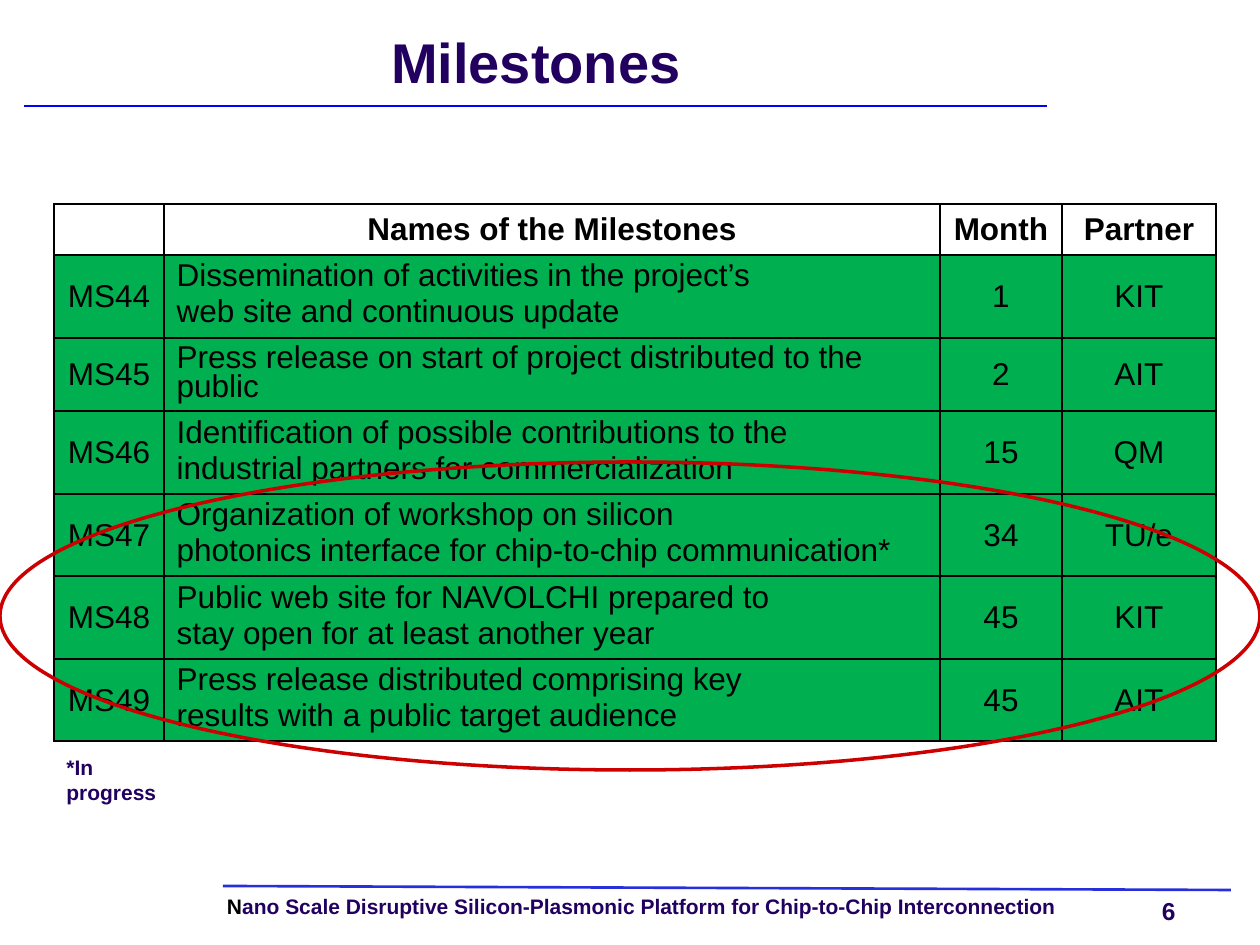
from lxml.etree import SubElement
from pptx import Presentation
from pptx.dml.color import RGBColor
from pptx.enum.shapes import MSO_CONNECTOR, MSO_SHAPE
from pptx.enum.text import MSO_ANCHOR, PP_ALIGN
from pptx.oxml.ns import qn
from pptx.util import Emu, Pt

EMU_PER_PX = 914400 / 126
FONT = "Arial"
COLORS = {
    "title": "220060", "text": "000000", "done": "00B050", "ring": "CC0000",
    "title_rule": "0000FF", "footer_rule": "262FDA",
}
COLUMNS = [110, 776, 122, 154]
ROWS = [51, 83, 73, 83, 82, 83, 82]
HEADER = ["", "Names of the Milestones", "Month", "Partner"]
MILESTONES = [
    ("MS44", ["Dissemination of activities in the project’s",
              "web site and continuous update"], "1", "KIT"),
    ("MS45", ["Press release on start of project distributed to the public"], "2", "AIT"),
    ("MS46", ["Identification of possible contributions to the",
              "industrial partners for commercialization"], "15", "QM"),
    ("MS47", ["Organization of workshop on silicon",
              "photonics interface for chip-to-chip communication*"], "34", "TU/e"),
    ("MS48", ["Public web site for NAVOLCHI prepared to",
              "stay open for at least another year"], "45", "KIT"),
    ("MS49", ["Press release distributed comprising key",
              "results with a public target audience"], "45", "AIT"),
]


def px(n):
    return Emu(round(n * EMU_PER_PX))


def rgb(name):
    return RGBColor.from_string(COLORS[name])


def set_text(tf, lines, size=18, bold=False, color="text", align=PP_ALIGN.LEFT,
             spacing=None, gap=0):
    """Each line is a paragraph: a string, or a list of (text, color) runs."""
    for i, line in enumerate(lines):
        p = tf.add_paragraph() if i else tf.paragraphs[0]
        p.alignment = align
        p.font.size = Pt(size)
        if spacing:
            p.line_spacing = spacing
        if i:
            p.space_before = Pt(gap)
        for text, run_color in [(line, color)] if isinstance(line, str) else line:
            r = p.add_run()
            r.text = text
            r.font.name, r.font.size, r.font.bold = FONT, Pt(size), bold
            r.font.color.rgb = rgb(run_color)


def clear_margins(tf):
    tf.margin_left = tf.margin_right = tf.margin_top = tf.margin_bottom = 0


def add_text(s, x, y, w, h, lines, wrap=True, inset=True, **fmt):
    tf = s.shapes.add_textbox(px(x), px(y), px(w), px(h)).text_frame
    tf.word_wrap = wrap
    if not inset:
        clear_margins(tf)
    set_text(tf, lines, **fmt)


def add_rule(s, x1, y1, x2, y2, color):
    line = s.shapes.add_connector(MSO_CONNECTOR.STRAIGHT, px(x1), px(y1), px(x2), px(y2))
    line.line.color.rgb = rgb(color)
    line.line.width = Pt(1.5)
    SubElement(line._element.spPr, qn("a:effectLst"))


def add_title(s, x, y, w, h):
    add_rule(s, x - 1, y + 81, x + w, y + 81, "title_rule")
    sp = s.shapes.title
    sp.left, sp.top, sp.width, sp.height = px(x), px(y), px(w), px(h)
    tf = sp.text_frame
    clear_margins(tf)
    tf.vertical_anchor = MSO_ANCHOR.MIDDLE
    set_text(tf, ["Milestones"], size=32, bold=True, color="title",
             align=PP_ALIGN.CENTER, spacing=Pt(32))


def add_footer(s, x, y, w):
    add_rule(s, x, y, x + w, y + 4, "footer_rule")
    add_text(s, x + 4, y + 10, 900, 23,
             [[("N", "text"),
               ("ano Scale Disruptive Silicon-Plasmonic Platform for "
                "Chip-to-Chip Interconnection", "title")]],
             inset=False, size=12, bold=True, spacing=0.9)
    add_text(s, x + 939, y + 10, 30, 29, ["6"], wrap=False, inset=False,
             size=14, bold=True, color="title")


def add_borders(cell):
    tc_pr = cell._tc.get_or_add_tcPr()
    for i, side in enumerate(("lnL", "lnR", "lnT", "lnB")):
        ln = tc_pr.makeelement(qn(f"a:{side}"), {"w": str(Pt(1))})
        fill = SubElement(ln, qn("a:solidFill"))
        SubElement(fill, qn("a:srgbClr"), val=COLORS["text"])
        tc_pr.insert(i, ln)


def add_milestones(s, x, y):
    frame = s.shapes.add_table(len(ROWS), len(COLUMNS), px(x), px(y),
                               px(sum(COLUMNS)), px(sum(ROWS)))
    table = frame.table
    for column, width in zip(table.columns, COLUMNS):
        column.width = px(width)
    for row, height in zip(table.rows, ROWS):
        row.height = px(height)
    for i, values in enumerate([HEADER, *MILESTONES]):
        for j, value in enumerate(values):
            cell = table.cell(i, j)
            cell.vertical_anchor = MSO_ANCHOR.MIDDLE
            if i:
                cell.fill.solid()
                cell.fill.fore_color.rgb = rgb("done")
            else:
                cell.fill.background()
            add_borders(cell)
            if isinstance(value, list):
                set_text(cell.text_frame, value, spacing=0.8, gap=4.5)
            else:
                set_text(cell.text_frame, [value], bold=i == 0, align=PP_ALIGN.CENTER)
    add_text(s, x, y + 544, 147, 38, ["*In progress"], wrap=False,
             size=12, bold=True, color="title")


def add_ring(s, x, y, w, h):
    sp = s.shapes.add_shape(MSO_SHAPE.OVAL, px(x), px(y), px(w), px(h))
    sp.shadow.inherit = False
    sp.fill.background()
    sp.line.color.rgb = rgb("ring")
    sp.line.width = Pt(2)


def main():
    prs = Presentation()
    prs.slide_width, prs.slide_height = px(1260), px(945)
    s = prs.slides.add_slide(prs.slide_layouts[5])
    add_footer(s, 223, 886, 1008)
    add_title(s, 25, 25, 1022, 84)
    add_milestones(s, 54, 204)
    add_ring(s, 0, 462, 1260, 308)
    prs.save("out.pptx")


if __name__ == "__main__":
    main()
